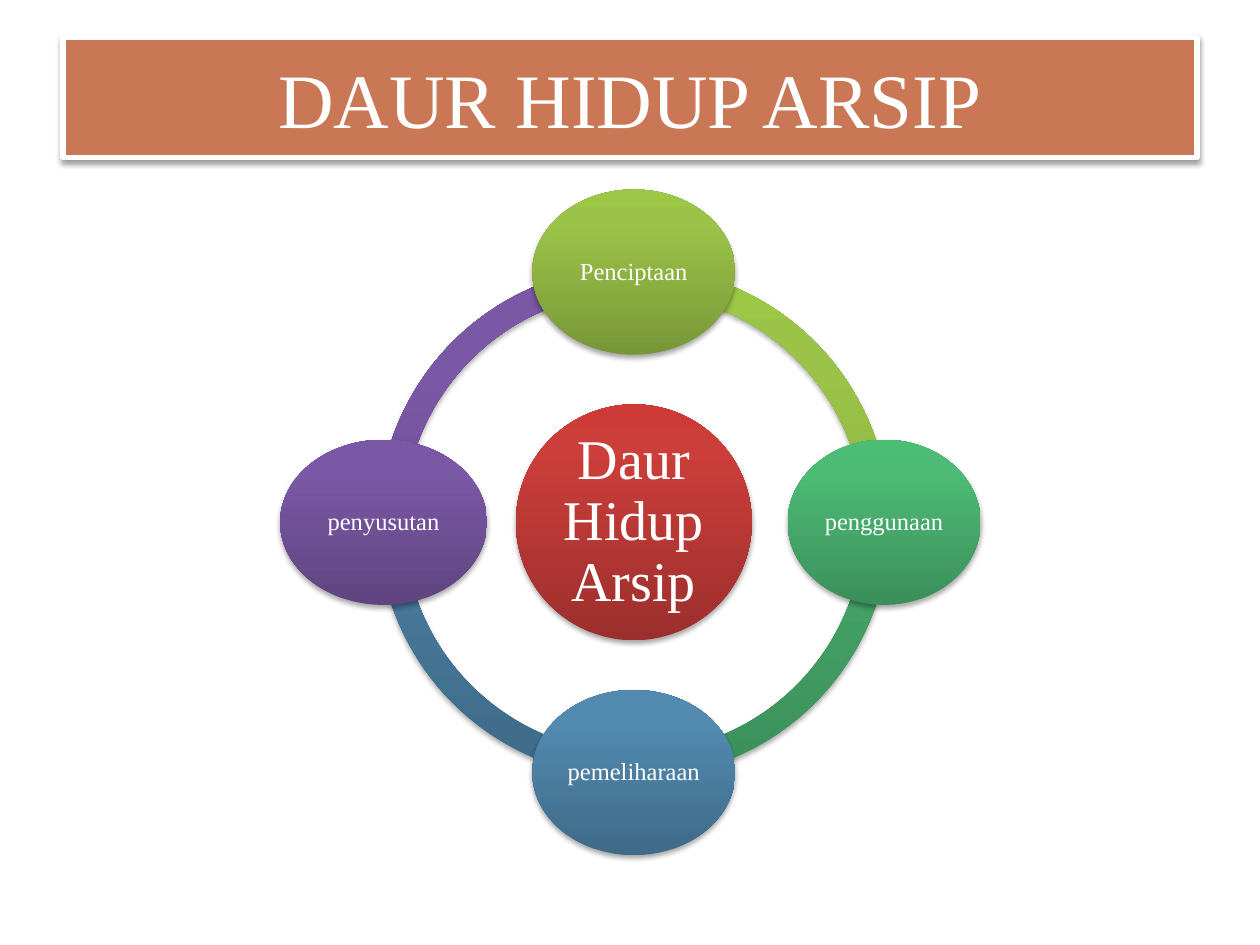
import copy
import math

from lxml import etree
from pptx import Presentation
from pptx import util as u
from pptx.dml import color
from pptx.enum import shapes, text
from pptx.oxml import ns

FONT = "Times New Roman"
CENTER_X, CENTER_Y = 362.2, 298.5
ORBIT = 143
RING_SIZE = 292.3
HUB_SIZE = 134.8
STAGE_HEIGHT = 94.4

HUB_COLORS = ("9C2F2D", "CB3E3A", "CE3B37")
STAGES = [
    ("Penciptaan", 116, ("779737", "9BC348", "9DC746")),
    ("penggunaan", 110.3, ("3B8F5A", "4DBA75", "4BBD75")),
    ("pemeliharaan", 116, ("3F6A88", "528AB0", "518BB3")),
    ("penyusutan", 118.2, ("5F4480", "7B58A6", "7C57A8")),
]


def rgb(value):
    return color.RGBColor.from_string(value)


def add_shadow(shape, opacity, distance):
    shape.shadow.inherit = False
    effects = shape._element.spPr.find(ns.qn("a:effectLst"))
    shadow = etree.SubElement(
        effects, ns.qn("a:outerShdw"), blurRad=str(u.Pt(3.1)),
        dist=str(u.Pt(distance)), dir="5400000", rotWithShape="0")
    tone = etree.SubElement(shadow, ns.qn("a:srgbClr"), val="000000")
    etree.SubElement(tone, ns.qn("a:alpha"), val=str(opacity * 1000))


def fill_gradient(shape, colors):
    shape.fill.gradient()
    shape.fill.gradient_angle = 90
    stop_list = shape._element.spPr.find(".//" + ns.qn("a:gsLst"))
    stop_list.append(copy.deepcopy(stop_list[-1]))
    for stop, position, value in zip(shape.fill.gradient_stops, (0, 0.8, 1), colors):
        stop.position = position
        stop.color.rgb = rgb(value)


def add_centered(page, kind, x, y, width, height):
    return page.shapes.add_shape(
        kind, u.Pt(x - width / 2), u.Pt(y - height / 2), u.Pt(width), u.Pt(height))


def add_glossy(page, kind, x, y, width, height, colors):
    shape = add_centered(page, kind, x, y, width, height)
    fill_gradient(shape, colors)
    shape.line.fill.background()
    add_shadow(shape, 35, 1.8)
    return shape


def set_label(shape, label, size, inset, spacing=1.0):
    frame = shape.text_frame
    frame.text = label
    frame.word_wrap = True
    frame.vertical_anchor = text.MSO_ANCHOR.MIDDLE
    frame.margin_left = frame.margin_right = u.Pt(inset)
    frame.margin_top = frame.margin_bottom = u.Pt(inset)
    para = frame.paragraphs[0]
    para.alignment = text.PP_ALIGN.CENTER
    para.line_spacing = spacing
    span = para.runs[0]
    span.font.name = FONT
    span.font.size = u.Pt(size)
    span.font.color.rgb = rgb("FFFFFF")


def add_title(page, label):
    banner = add_centered(page, shapes.MSO_SHAPE.RECTANGLE, 360, 55.8, 648, 68.4)
    banner.fill.solid()
    banner.fill.fore_color.rgb = rgb("CA7756")
    banner.line.color.rgb = rgb("FFFFFF")
    banner.line.width = u.Pt(3)
    add_shadow(banner, 38, 1.6)
    set_label(banner, label, 44, 3.6)


def add_arc(page, index, colors):
    arc = add_glossy(page, shapes.MSO_SHAPE.BLOCK_ARC, CENTER_X, CENTER_Y,
                     RING_SIZE, RING_SIZE, colors)
    quarter, full = 54, 216
    arc.adjustments[0] = (index - 1) * quarter % full
    arc.adjustments[1] = index * quarter % full
    arc.adjustments[2] = 0.05


def add_hub(page, label):
    hub = add_glossy(page, shapes.MSO_SHAPE.OVAL, CENTER_X, CENTER_Y,
                     HUB_SIZE, HUB_SIZE, HUB_COLORS)
    set_label(hub, label, 32, 3, 0.9)


def add_stage(page, index, label, width, colors):
    angle = math.radians(90 * (index - 1))
    x = CENTER_X + ORBIT * math.cos(angle)
    y = CENTER_Y + ORBIT * math.sin(angle)
    stage = add_glossy(page, shapes.MSO_SHAPE.OVAL, x, y, width, STAGE_HEIGHT, colors)
    set_label(stage, label, 14, 1.4, 0.9)


def main():
    deck = Presentation()
    deck.slide_width, deck.slide_height = u.Pt(720), u.Pt(540)
    page = deck.slides.add_slide(deck.slide_layouts[6])
    add_title(page, "DAUR HIDUP ARSIP")
    for index, (label, width, colors) in reversed(list(enumerate(STAGES))):
        add_arc(page, index, colors)
    add_hub(page, "Daur Hidup Arsip")
    for index, (label, width, colors) in enumerate(STAGES):
        add_stage(page, index, label, width, colors)
    deck.save("out.pptx")


if __name__ == "__main__":
    main()
